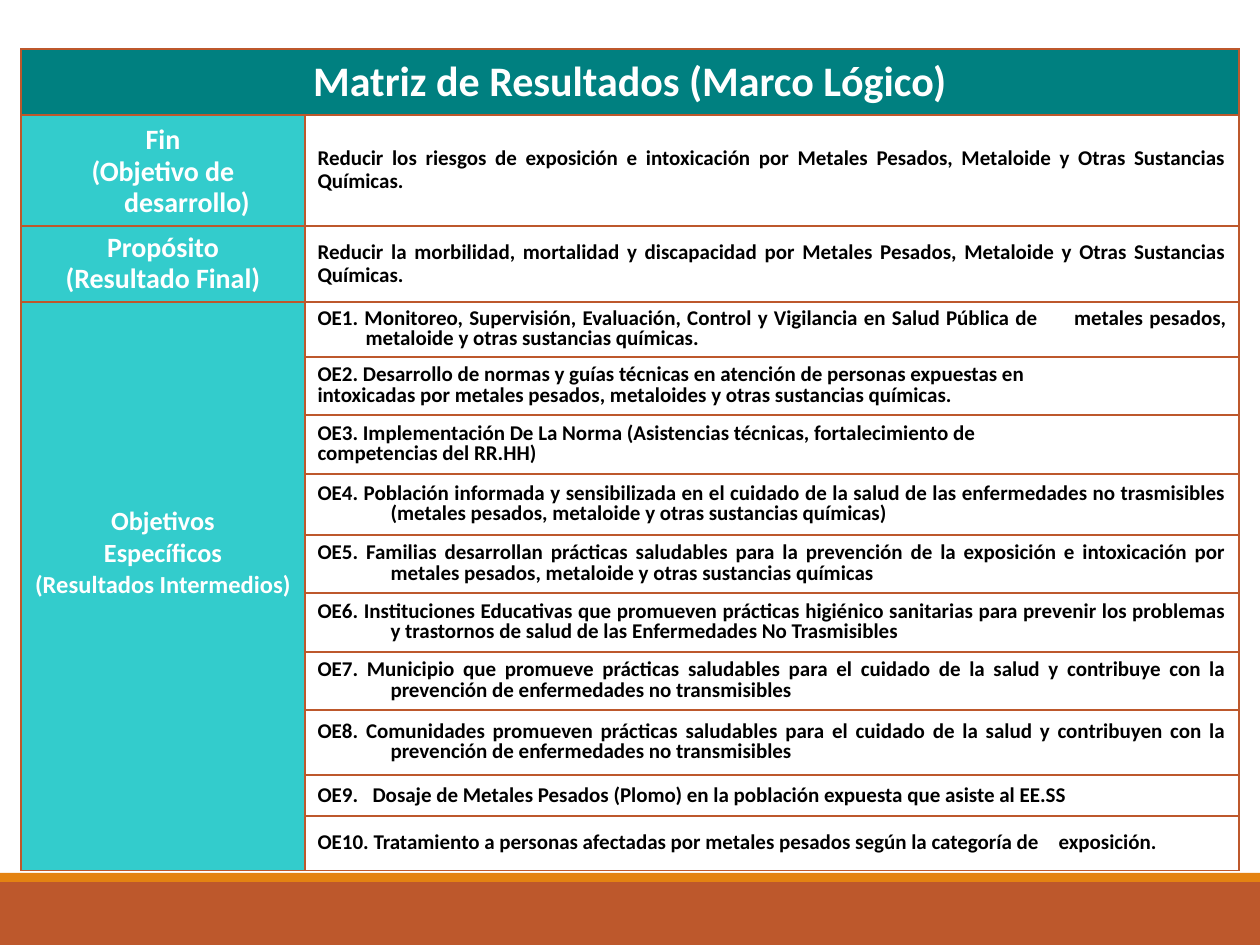
from dataclasses import dataclass

from lxml import etree
from pptx import Presentation
from pptx import util as u
from pptx.dml.color import RGBColor
from pptx.enum import shapes, text
from pptx.oxml.ns import qn

EMU_PER_PX = 914400 // 126
CENTER, JUSTIFY, LEFT = text.PP_ALIGN.CENTER, text.PP_ALIGN.JUSTIFY, text.PP_ALIGN.LEFT


@dataclass(frozen=True)
class Theme:
    font: str = "Calibri"
    header: str = "008080"
    label: str = "33CCCC"
    paper: str = "FFFFFF"
    ink: str = "000000"
    rust: str = "BD582C"
    orange: str = "E48312"
    title_size: int = 24
    label_size: int = 16
    objective_label_size: int = 15
    note_size: int = 14
    body_size: int = 12


THEME = Theme()
COLUMNS = [284, 934]
ROWS = [66, 111, 76, 55, 58, 59, 61, 58, 59, 58, 65, 41, 55]
NARROW, WIDE = 48, 73  # hanging indents

# Label cells: row, lines with their size and spacing
LABELS = [
    (1, [("Fin", THEME.label_size, 1), ("(Objetivo de desarrollo)", THEME.label_size, 0.9)]),
    (2, [("Propósito", THEME.label_size, 0.9), ("(Resultado Final)", THEME.label_size, 0.9)]),
    (3, [("Objetivos", THEME.objective_label_size, 1),
         ("Específicos", THEME.objective_label_size, 1),
         ("(Resultados Intermedios)", THEME.note_size, 1)]),
]

# Goals and objectives: lines, hanging indent, line spacing, alignment, tab stop
STATEMENTS = [
    (["Reducir los riesgos de exposición e intoxicación por Metales Pesados, Metaloide y Otras "
      "Sustancias Químicas."], 0, 0.9, JUSTIFY, None),
    (["Reducir la morbilidad, mortalidad y discapacidad por Metales Pesados, Metaloide y Otras "
      "Sustancias Químicas."], 0, 0.9, JUSTIFY, None),
    (["OE1. Monitoreo, Supervisión, Evaluación, Control y Vigilancia en Salud Pública de\t"
      "metales pesados, metaloide y otras sustancias químicas."], NARROW, 0.8, JUSTIFY, 756),
    (["OE2. Desarrollo de normas y guías técnicas en atención de personas expuestas en",
      "intoxicadas por metales pesados, metaloides y otras sustancias químicas."],
     WIDE, 0.8, JUSTIFY, None),
    (["OE3. Implementación De La Norma (Asistencias técnicas, fortalecimiento de",
      "competencias del RR.HH)"], WIDE, 0.8, JUSTIFY, None),
    (["OE4. Población informada y sensibilizada en el cuidado de la salud de las enfermedades no "
      "trasmisibles (metales pesados, metaloide y otras sustancias químicas)"],
     WIDE, 0.8, JUSTIFY, None),
    (["OE5. Familias desarrollan prácticas saludables para la prevención de la exposición e "
      "intoxicación por metales pesados, metaloide y otras sustancias químicas"],
     WIDE, 0.8, JUSTIFY, None),
    (["OE6. Instituciones Educativas que promueven prácticas higiénico sanitarias para prevenir "
      "los problemas y trastornos de salud de las Enfermedades No Trasmisibles"],
     WIDE, 0.8, JUSTIFY, None),
    (["OE7. Municipio que promueve prácticas saludables para el cuidado de la salud y contribuye "
      "con la prevención de enfermedades no transmisibles"], WIDE, 0.8, JUSTIFY, None),
    (["OE8. Comunidades promueven prácticas saludables para el cuidado de la salud y contribuyen "
      "con la prevención de enfermedades no transmisibles"], WIDE, 0.8, JUSTIFY, None),
    (["OE9.\tDosaje de Metales Pesados (Plomo) en la población expuesta que asiste al EE.SS"],
     55, 1, JUSTIFY, 55),
    (["OE10. Tratamiento a personas afectadas por metales pesados según la categoría de\t"
      "exposición."], NARROW, 0.8, LEFT, 769),
]


def px(value):
    return u.Emu(value * EMU_PER_PX)


def rgb(color):
    return RGBColor.from_string(color)


def add_band(slide, top, height, color):
    band = slide.shapes.add_shape(shapes.MSO_SHAPE.RECTANGLE, 0, px(top), px(1260), px(height))
    band.shadow.inherit = False
    band.fill.solid()
    band.fill.fore_color.rgb = rgb(color)
    band.line.fill.background()


def style_cell(cell, fill):
    cell.vertical_anchor = text.MSO_ANCHOR.MIDDLE
    properties = cell._tc.get_or_add_tcPr()
    for side in ("a:lnL", "a:lnR", "a:lnT", "a:lnB"):
        line = etree.SubElement(properties, qn(side), w=str(u.Pt(1)))
        solid = etree.SubElement(line, qn("a:solidFill"))
        etree.SubElement(solid, qn("a:srgbClr"), val=THEME.rust)
    cell.fill.solid()
    cell.fill.fore_color.rgb = rgb(fill)


def format_paragraph(paragraph, size, color, align, spacing, indent, tab=None):
    paragraph.alignment = align
    paragraph.line_spacing = spacing
    properties = paragraph._p.get_or_add_pPr()
    properties.set("marL", str(px(indent)))
    properties.set("indent", str(px(-indent)))
    if tab:
        stops = etree.SubElement(properties, qn("a:tabLst"))
        etree.SubElement(stops, qn("a:tab"), pos=str(px(tab)), algn="l")
    for run in paragraph.runs:
        run.font.name = THEME.font
        run.font.size = u.Pt(size)
        run.font.bold = True
        run.font.color.rgb = rgb(color)


def fill_label(cell, lines):
    cell.text_frame.text = "\n".join(line for line, _, _ in lines)
    for paragraph, (_, size, spacing) in zip(cell.text_frame.paragraphs, lines):
        format_paragraph(paragraph, size, THEME.paper, CENTER, spacing, NARROW)


def fill_statement(cell, lines, indent, spacing, align, tab):
    cell.text_frame.text = "\n".join(lines)
    for paragraph in cell.text_frame.paragraphs:
        format_paragraph(paragraph, THEME.body_size, THEME.ink, align, spacing, indent, tab)


def add_matrix(slide):
    frame = slide.shapes.add_table(len(ROWS), len(COLUMNS), px(21), px(49),
                                   px(sum(COLUMNS)), px(sum(ROWS)))
    table = frame.table
    for column, width in zip(table.columns, COLUMNS):
        column.width = px(width)
    for row_index, (row, height) in enumerate(zip(table.rows, ROWS)):
        row.height = px(height)
        for column_index, cell in enumerate(row.cells):
            side_fill = THEME.paper if column_index else THEME.label
            style_cell(cell, side_fill if row_index else THEME.header)

    # Spans: heading across, specific objectives down
    table.cell(0, 0).merge(table.cell(0, 1))
    table.cell(3, 0).merge(table.cell(len(ROWS) - 1, 0))

    fill_label(table.cell(0, 0), [("Matriz de Resultados (Marco Lógico)", THEME.title_size, 1)])
    for row_index, lines in LABELS:
        fill_label(table.cell(row_index, 0), lines)
    table.cell(3, 0).margin_bottom = px(74)  # lifts the label above the middle
    for row_index, statement in enumerate(STATEMENTS, start=1):
        fill_statement(table.cell(row_index, 1), *statement)


def main():
    presentation = Presentation()
    presentation.slide_width, presentation.slide_height = px(1260), px(945)
    slide = presentation.slides.add_slide(presentation.slide_layouts[6])

    # Footer bands
    add_band(slide, 882, 63, THEME.rust)
    add_band(slide, 873, 9, THEME.orange)

    # Results matrix
    add_matrix(slide)
    presentation.save("out.pptx")


if __name__ == "__main__":
    main()
